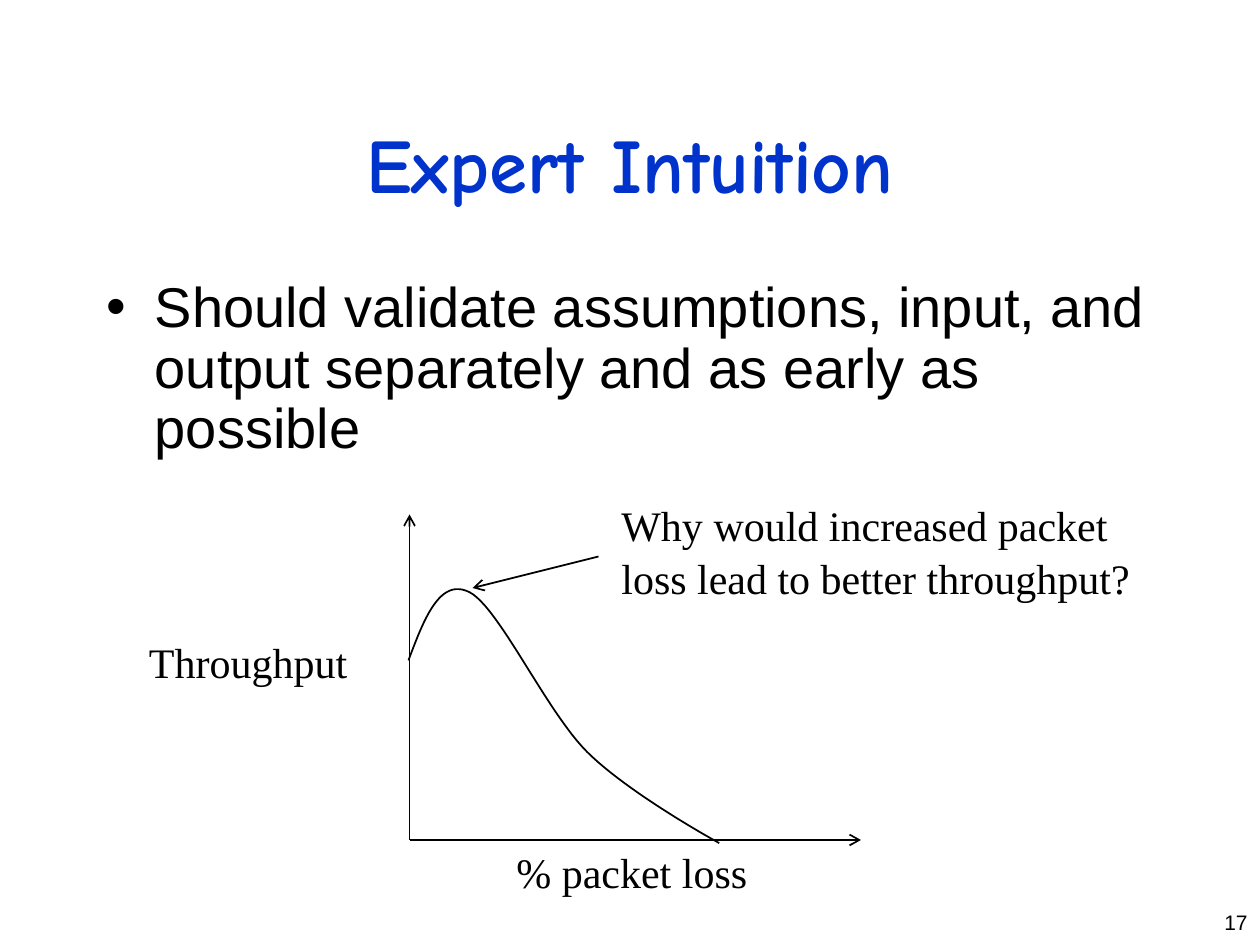
from lxml import etree
from pptx import Presentation, util as u
from pptx.dml.color import RGBColor
from pptx.enum import shapes, text
from pptx.oxml.ns import qn

HUES = {"title": "0033CC", "ink": "000000", "page": "FFFFFF"}
COLS, ROWS = 120, 90
SANS, SERIF, ROUND = "Arial", "Times New Roman", "Comic Neue"

deck = Presentation()
deck.slide_width, deck.slide_height = u.Inches(10), u.Inches(7.5)
CELL = deck.slide_width / COLS


def cells(*nums):
    return [round(n * CELL) for n in nums]


def hue(key):
    return RGBColor.from_string(HUES[key])


def write(frame, lines, size, face, key="ink", bold=False, align=text.PP_ALIGN.LEFT, gap=0):
    for i, line in enumerate(lines):
        para = frame.paragraphs[0] if i == 0 else frame.add_paragraph()
        para.alignment = align
        para.space_before = u.Pt(gap if i else 0)
        run = para.add_run()
        run.text = line
        font = run.font
        font.size, font.name, font.bold = u.Pt(size), face, bold
        font.color.rgb = hue(key)


def label(slide, box, lines, size=24, face=SERIF, wrap=False, **style):
    frame = slide.shapes.add_textbox(*cells(*box)).text_frame
    frame.word_wrap = wrap
    write(frame, lines, size, face, **style)
    return frame


def heading(slide, box):
    title = slide.shapes.title
    title.left, title.top, title.width, title.height = cells(*box)
    frame = title.text_frame
    frame.vertical_anchor = text.MSO_ANCHOR.MIDDLE
    write(frame, ["Expert Intuition"], 44, ROUND, "title", True, text.PP_ALIGN.CENTER)


def body(slide, box):
    point = "Should validate assumptions, input, and output separately and as early as possible"
    para = label(slide, box, [point], 32, SANS, True).paragraphs[0]
    para.line_spacing = 0.9
    props = para._p.get_or_add_pPr()
    hang = u.Inches(0.38)
    props.set("marL", str(hang))
    props.set("indent", str(-hang))
    etree.SubElement(props, qn("a:buFont"), typeface=SANS)
    etree.SubElement(props, qn("a:buChar"), char="•")


def arrow(slide, start, end):
    line = slide.shapes.add_connector(
        shapes.MSO_CONNECTOR.STRAIGHT, *cells(*start, *end))
    line.line.width = u.Pt(1)
    line.line.color.rgb = hue("ink")
    etree.SubElement(line.line._get_or_add_ln(), qn("a:tailEnd"), type="arrow")
    etree.SubElement(line._element.spPr, qn("a:effectLst"))


def bezier(knots, steps=24):
    dots = [knots[0]]
    for i in range(0, len(knots) - 1, 3):
        a, b, c, d = knots[i:i + 4]
        for k in range(1, steps + 1):
            t = k / steps
            s = 1 - t
            dots.append([s**3 * p + 3 * s * s * t * q + 3 * s * t * t * r + t**3 * v
                         for p, q, r, v in zip(a, b, c, d)])
    return dots


def curve(slide, left, top):
    knots = [(-0.1, 13.9), (1.4, 9.9), (2.9, 6), (5.7, 7.4), (8.5, 8.8),
             (13, 18.7), (16.9, 22.6), (20.9, 26.6), (29.5, 31.3), (29.5, 31.3)]
    dots = [cells(left + x, top + y) for x, y in bezier(knots)]
    path = slide.shapes.build_freeform(*dots[0])
    path.add_line_segments(dots[1:], close=False)
    shape = path.convert_to_shape()
    shape.shadow.inherit = False
    shape.fill.background()
    shape.line.width = u.Pt(1)
    shape.line.color.rgb = hue("ink")


def plot(slide, box):
    left, top, width, height = box
    base = top + height
    arrow(slide, (left, base), (left + width, base))
    arrow(slide, (left, base), (left, top))
    label(slide, (left + 9, base, 24.6, 6), ["% packet loss"])
    label(slide, (left - 26, top + 11, 21.5, 6), ["Throughput"])
    curve(slide, left, top)
    arrow(slide, (left + 18, top + 4), (left + 6, top + 7))
    ask = ["Why would increased packet", "loss lead to better throughput?"]
    label(slide, (left + 19, top - 2, 52.8, 11), ask, gap=1.5)


def number(slide, box):
    label(slide, box, ["17"], 12, SANS, True, align=text.PP_ALIGN.RIGHT)


def main():
    slide = deck.slides.add_slide(deck.slide_layouts[5])
    slide.background.fill.solid()
    slide.background.fill.fore_color.rgb = hue("page")
    heading(slide, (9, 8, COLS - 18, 15))
    body(slide, (9, 26, COLS - 18, 54))
    number(slide, (COLS - 9, ROWS - 4, 9, 4))
    plot(slide, (39, 49, 43, 31))
    deck.save("out.pptx")


if __name__ == "__main__":
    main()
